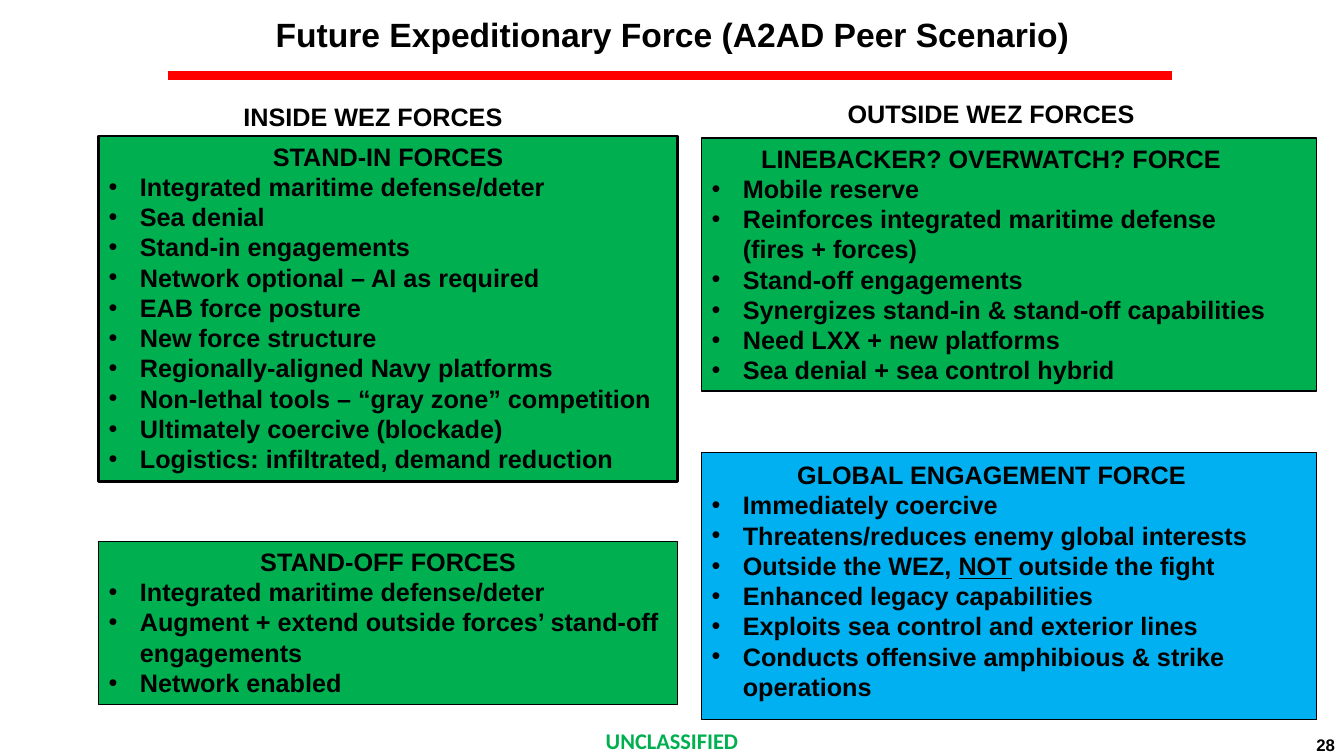
"""Build the Future Expeditionary Force slide."""
from lxml import etree
from pptx import Presentation
from pptx.dml.color import RGBColor
from pptx.enum.shapes import MSO_CONNECTOR, MSO_SHAPE
from pptx.enum.text import MSO_ANCHOR, MSO_AUTO_SIZE, PP_ALIGN
from pptx.oxml.ns import qn
from pptx.util import Inches, Pt

RECT, STRAIGHT = MSO_SHAPE.RECTANGLE, MSO_CONNECTOR.STRAIGHT
LEFT, CENTER, RIGHT = PP_ALIGN.LEFT, PP_ALIGN.CENTER, PP_ALIGN.RIGHT
TOP, MIDDLE, BOTTOM = MSO_ANCHOR.TOP, MSO_ANCHOR.MIDDLE, MSO_ANCHOR.BOTTOM
NO_FIT = MSO_AUTO_SIZE.NONE

BLACK = RGBColor(0x00, 0x00, 0x00)
RED = RGBColor(0xFF, 0x00, 0x00)
GREEN = RGBColor(0x00, 0xB0, 0x50)
BLUE = RGBColor(0x00, 0xB0, 0xF0)

TITLE = "Future Expeditionary Force (A2AD Peer Scenario)"
LABELS = [
    ("INSIDE WEZ FORCES", (1.78, 0.96, 3.84, 0.4)),
    ("OUTSIDE WEZ FORCES", (7.91, 0.93, 3.84, 0.4)),
]
UNDERLINED = "NOT"
FORCES = [
    {"panel": (0.98, 1.35, 5.74, 3.43), "fill": GREEN, "line": 2,
     "heading": "STAND-IN FORCES",
     "bullets": ["Integrated maritime defense/deter",
                 "Sea denial",
                 "Stand-in engagements",
                 "Network optional – AI as required",
                 "EAB force posture",
                 "New force structure",
                 "Regionally-aligned Navy platforms",
                 "Non-lethal tools – “gray zone” competition",
                 "Ultimately coercive (blockade)",
                 "Logistics: infiltrated, demand reduction"]},
    {"panel": (0.98, 5.37, 5.74, 1.62), "fill": GREEN, "line": 1,
     "heading": "STAND-OFF FORCES",
     "bullets": ["Integrated maritime defense/deter",
                 "Augment + extend outside forces’ stand-off engagements",
                 "Network enabled"]},
    {"panel": (6.96, 1.37, 6.1, 2.51), "fill": GREEN, "line": 1,
     "text": (6.96, 1.37, 5.74, 2.52),
     "heading": "LINEBACKER? OVERWATCH? FORCE",
     "bullets": ["Mobile reserve",
                 "Reinforces integrated maritime defense (fires + forces)",
                 "Stand-off engagements",
                 "Synergizes stand-in & stand-off capabilities",
                 "Need LXX + new platforms",
                 "Sea denial + sea control hybrid"]},
    {"panel": (6.96, 4.49, 6.1, 2.65), "fill": BLUE, "line": 1,
     "text": (6.96, 4.51, 5.75, 2.52),
     "heading": "GLOBAL ENGAGEMENT FORCE",
     "bullets": ["Immediately coercive",
                 "Threatens/reduces enemy global interests",
                 "Outside the WEZ, NOT outside the fight",
                 "Enhanced legacy capabilities",
                 "Exploits sea control and exterior lines",
                 "Conducts offensive amphibious & strike operations"]},
]


def inches(box):
    """Convert a tuple of numbers to lengths."""
    return [Inches(v) for v in box]


def write(sp, lines, size=18, font="Arial", color=BLACK, align=CENTER, anchor=TOP):
    """Fill a shape with a first line and bulleted lines after it."""
    tf = sp.text_frame
    tf.word_wrap = True
    tf.auto_size = NO_FIT
    tf.vertical_anchor = anchor
    for i, line in enumerate(lines):
        p = tf.add_paragraph() if i else tf.paragraphs[0]
        p.alignment = LEFT if i else align
        if i:
            add_bullet(p)
        before, mark, after = line.partition(UNDERLINED)
        for text in filter(None, (before, mark, after)):
            r = p.add_run()
            r.text = text
            r.font.name, r.font.size, r.font.bold = font, Pt(size), True
            r.font.color.rgb = color
            if text == UNDERLINED:
                r.font.underline = True


def add_bullet(p):
    """Give a paragraph a hanging round bullet."""
    pPr = p._p.get_or_add_pPr()
    indent = Inches(0.31)
    pPr.set("marL", str(indent))
    pPr.set("indent", str(-indent))
    etree.SubElement(pPr, qn("a:buFont")).set("typeface", "Arial")
    etree.SubElement(pPr, qn("a:buChar")).set("char", "•")


def add_text(s, box, lines, **fmt):
    """Add a text box."""
    write(s.shapes.add_textbox(*inches(box)), lines, **fmt)


def add_force(s, force):
    """Add a panel with its heading and bullets."""
    sp = s.shapes.add_shape(RECT, *inches(force["panel"]))
    sp.shadow.inherit = False
    sp.fill.solid()
    sp.fill.fore_color.rgb = force["fill"]
    sp.line.color.rgb = BLACK
    sp.line.width = Pt(force["line"])
    lines = [force["heading"], *force["bullets"]]
    if "text" in force:
        add_text(s, force["text"], lines)
    else:
        write(sp, lines)


def main():
    """Build and save the slide."""
    prs = Presentation()
    prs.slide_width, prs.slide_height = Inches(13.33), Inches(7.5)
    s = prs.slides.add_slide(prs.slide_layouts[5])

    title = s.shapes.title
    title.left, title.top, title.width, title.height = inches((1.78, 0, 9.78, 0.67))
    write(title, [TITLE], size=24, anchor=MIDDLE)

    rule = s.shapes.add_connector(STRAIGHT, *inches((1.67, 0.75, 11.62, 0.75)))
    rule.line.color.rgb = RED
    rule.line.width = Pt(6)
    etree.SubElement(rule._element.spPr, qn("a:effectLst"))

    for force in FORCES:
        add_force(s, force)
    for label, box in LABELS:
        add_text(s, box, [label])
    add_text(s, (0, 7.16, 13.33, 0.36), ["UNCLASSIFIED"],
             size=16, font="Calibri", color=GREEN)
    add_text(s, (10.56, 7.04, 2.78, 0.5), ["28"], size=12, align=RIGHT, anchor=BOTTOM)
    prs.save("out.pptx")


if __name__ == "__main__":
    main()
